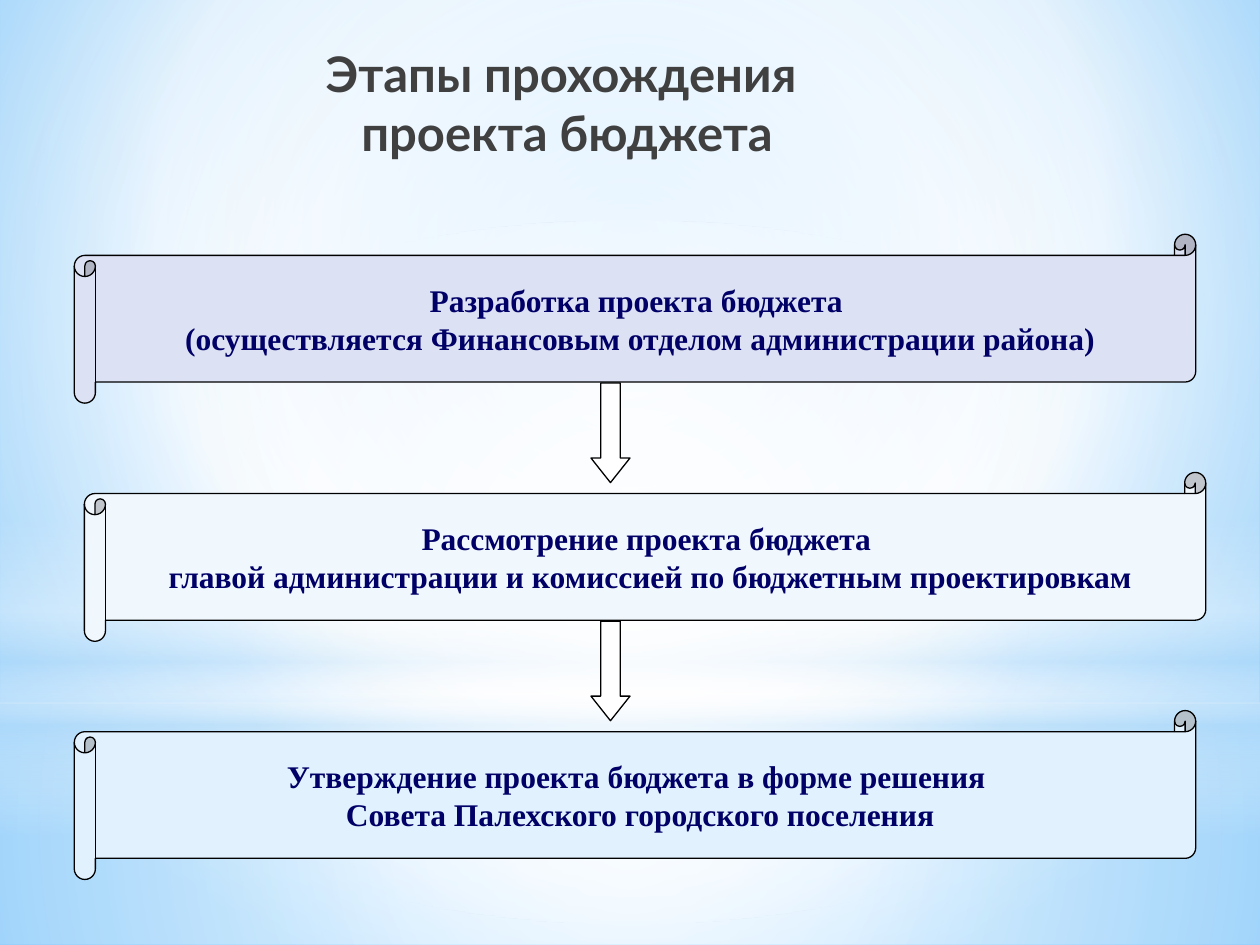
from dataclasses import dataclass

from lxml.etree import SubElement
from pptx import Presentation
from pptx.dml.color import RGBColor
from pptx.enum.shapes import MSO_SHAPE as Shape
from pptx.enum.text import MSO_ANCHOR as Anchor, PP_ALIGN as Align
from pptx.oxml.ns import qn
from pptx.util import Inches, Pt

WIDTH, HEIGHT = 10, 7.5
ROW_TOP, ROW_STEP = 1.86, 1.89
SCROLL_SIZE = (8.9, 1.34)
ARROW_SIZE = (0.31, 0.79)
ARROW_LEFT, ARROW_DROP = 4.69, 1.18
CENTRE = (50, 50, 50, 50)


@dataclass(frozen=True)
class Gradient:
    """Stops of position, colour and opacity; a circle in focus, or linear."""
    stops: tuple
    focus: tuple | None = CENTRE


@dataclass(frozen=True)
class Glow:
    """A full-width backdrop band, placed in shares of the slide's height."""
    kind: Shape
    top: float
    height: float
    gradient: Gradient


@dataclass(frozen=True)
class Stage:
    """One stage of the budget's passage."""
    left: float
    fill: str
    lines: tuple


BACKDROP = Gradient(((0, "9ED5FF", 100), (60, "FFFFFF", 100), (100, "5BB9FF", 100)),
                    (20, 10, 20, 60))
GLOWS = (
    Glow(Shape.RECTANGLE, 0.744, 0.256,
         Gradient(((0, "FFFFFF", 91), (37, "FFFFFF", 76), (100, "B4DCFA", 79)))),
    Glow(Shape.RECTANGLE, 0, 0.744,
         Gradient(((0, "FFFFFF", 89), (48, "FFFFFF", 62), (100, "B4DCFA", 79)))),
    Glow(Shape.RECTANGLE, 0.55, 0.333,
         Gradient(((0, "FFFFFF", 0), (29, "FFFFFF", 30), (45, "B4DCFA", 40),
                   (55, "FFFFFF", 26), (65, "B4DCFA", 60), (100, "FFFFFF", 0)), None)),
    Glow(Shape.OVAL, 0.233, 0.744, Gradient(((0, "FFFFFF", 100), (56, "FFFFFF", 0)))),
)
STAGES = (
    Stage(0.59, "DCE1F4", ("Разработка проекта бюджета ",
                           "(осуществляется Финансовым отделом администрации района)")),
    Stage(0.67, "F0F8FE", ("Рассмотрение проекта бюджета ",
                           "главой администрации и комиссией по бюджетным проектировкам")),
    Stage(0.59, "E1F1FD", ("Утверждение проекта бюджета в форме решения ",
                           "Совета Палехского городского поселения")),
)


def colour(value: str) -> RGBColor:
    """Turn a hex string into a colour."""
    return RGBColor.from_string(value)


def apply_gradient(fill, holder, gradient: Gradient) -> None:
    """Swap the holder's fill for a gradient with opacity."""
    fill.solid()
    solid = holder.find(qn("a:solidFill"))
    grad = SubElement(holder, qn("a:gradFill"), rotWithShape="1")
    holder.replace(solid, grad)
    stops = SubElement(grad, qn("a:gsLst"))
    for position, value, opacity in gradient.stops:
        stop = SubElement(stops, qn("a:gs"), pos=str(position * 1000))
        tint = SubElement(stop, qn("a:srgbClr"), val=value)
        if opacity < 100:
            SubElement(tint, qn("a:alpha"), val=str(opacity * 1000))
    if gradient.focus:
        circle = SubElement(grad, qn("a:path"), {"path": "circle"})
        edges = {side: str(share * 1000) for side, share in zip("ltrb", gradient.focus)}
        SubElement(circle, qn("a:fillToRect"), edges)
    else:
        SubElement(grad, qn("a:lin"), ang="5400000", scaled="0")


def add_box(page, kind: Shape, left: float, top: float, size: tuple):
    """Add a preset shape without a shadow."""
    box = page.shapes.add_shape(kind, Inches(left), Inches(top), *map(Inches, size))
    box.shadow.inherit = False
    return box


def add_outlined(page, kind: Shape, left: float, top: float, size: tuple, fill: str):
    """Add a filled shape with a thin black outline."""
    box = add_box(page, kind, left, top, size)
    box.fill.solid()
    box.fill.fore_color.rgb = colour(fill)
    box.line.color.rgb = colour("000000")
    box.line.width = Pt(0.75)
    return box


def add_glow(page, glow: Glow) -> None:
    """Draw one backdrop band."""
    box = add_box(page, glow.kind, 0, glow.top * HEIGHT, (WIDTH, glow.height * HEIGHT))
    box.line.fill.background()
    apply_gradient(box.fill, box.element.spPr, glow.gradient)


def write_lines(frame, lines: tuple, face: str, size: int, ink: str) -> None:
    """Write centred bold paragraphs."""
    frame.text = "\n".join(lines)
    for para in frame.paragraphs:
        para.alignment = Align.CENTER
        para.font.name, para.font.size, para.font.bold = face, Pt(size), True
        para.font.color.rgb = colour(ink)


def add_title(page) -> None:
    """Write the slide's heading."""
    box = page.shapes.add_textbox(0, Inches(0.3), Inches(0.9 * WIDTH), Inches(0.94))
    box.text_frame.word_wrap = True
    write_lines(box.text_frame, ("Этапы прохождения \vпроекта бюджета",), "Lato", 28, "404040")


def add_stage(page, stage: Stage, row: int) -> None:
    """Draw a stage's scroll in its row."""
    top = ROW_TOP + row * ROW_STEP
    scroll = add_outlined(page, Shape.HORIZONTAL_SCROLL, stage.left, top, SCROLL_SIZE, stage.fill)
    frame = scroll.text_frame
    frame.word_wrap = False
    frame.vertical_anchor = Anchor.MIDDLE
    write_lines(frame, stage.lines, "Times New Roman", 18, "000066")


def add_arrow(page, row: int) -> None:
    """Draw the arrow that leaves a row."""
    top = ROW_TOP + row * ROW_STEP + ARROW_DROP
    arrow = add_outlined(page, Shape.DOWN_ARROW, ARROW_LEFT, top, ARROW_SIZE, "FFFFFF")
    arrow.adjustments[0], arrow.adjustments[1] = 0.5, 0.63


def main() -> None:
    """Build and save the deck."""
    deck = Presentation()
    deck.slide_width, deck.slide_height = Inches(WIDTH), Inches(HEIGHT)
    page = deck.slides.add_slide(deck.slide_layouts[6])
    fill = page.background.fill
    fill.solid()
    apply_gradient(fill, page.element.find(".//" + qn("p:bgPr")), BACKDROP)
    for glow in GLOWS:
        add_glow(page, glow)
    add_title(page)
    for row, stage in enumerate(STAGES):
        add_stage(page, stage, row)
    for row in range(len(STAGES) - 1):
        add_arrow(page, row)
    deck.save("out.pptx")


if __name__ == "__main__":
    main()
